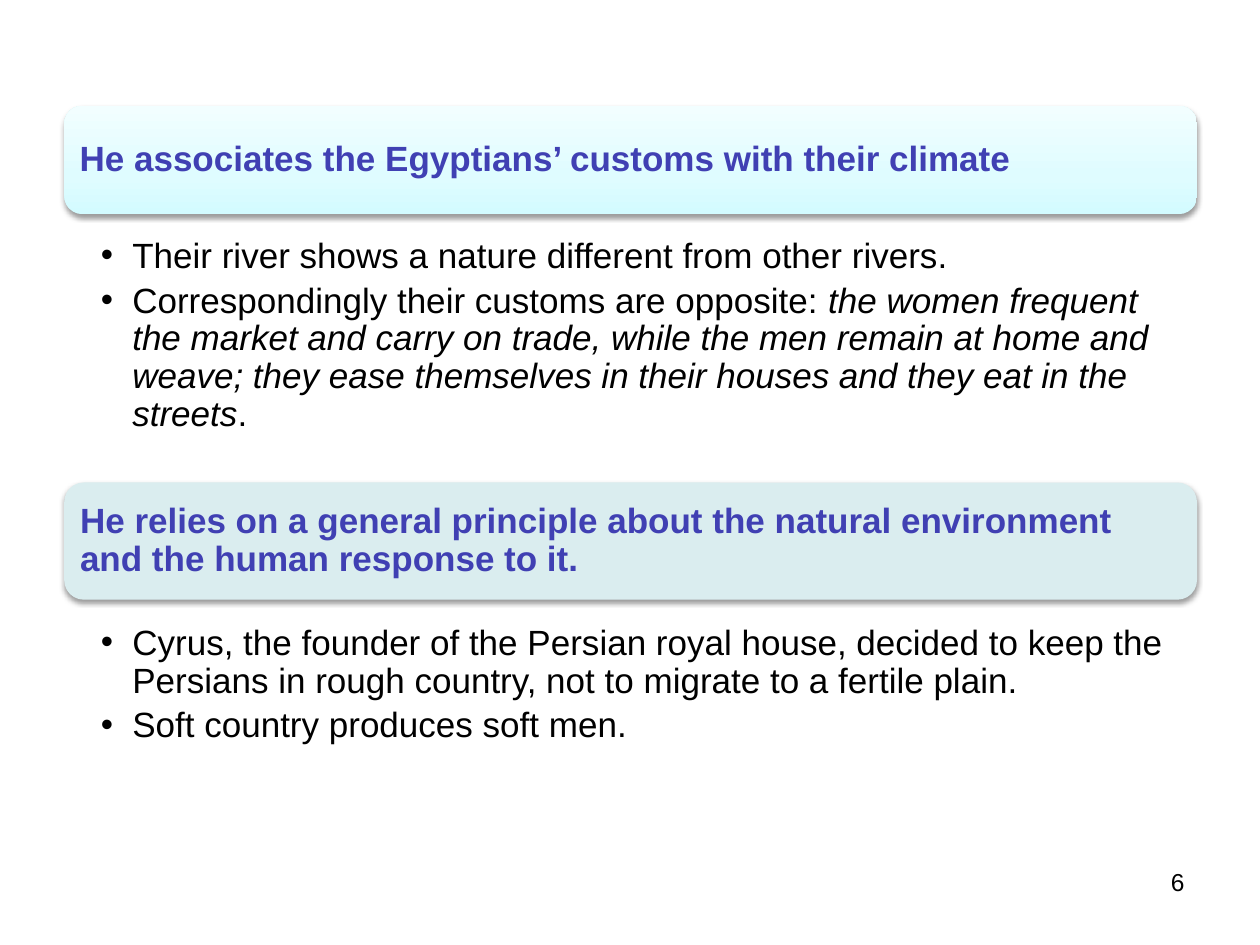
from copy import deepcopy
from dataclasses import dataclass
from typing import Optional

from lxml.etree import SubElement
from pptx import Presentation
from pptx.dml.color import RGBColor
from pptx.enum.shapes import MSO_SHAPE
from pptx.enum.text import MSO_ANCHOR, MSO_AUTO_SIZE, PP_ALIGN
from pptx.oxml.ns import qn
from pptx.util import Inches, Pt

BLACK = RGBColor(0x00, 0x00, 0x00)
INDIGO = RGBColor(0x40, 0x40, 0xB3)
PALE_TEAL = RGBColor(0xDA, 0xED, 0xEF)
CYAN_STOPS = (
    (0.0, RGBColor(0xD3, 0xFB, 0xFF)),
    (0.35, RGBColor(0xDF, 0xFC, 0xFF)),
    (1.0, RGBColor(0xF2, 0xFE, 0xFF)),
)
FONT = "Arial"
LEFT, WIDTH = 0.51, 8.99


@dataclass(frozen=True)
class Phrase:
    text: str
    italic: bool = False


@dataclass(frozen=True)
class Section:
    heading: str
    heading_top: float
    heading_height: float
    points: tuple[tuple[Phrase, ...], ...]
    points_top: float
    points_height: float
    solid: Optional[RGBColor] = None


SECTIONS = (
    Section(
        "He associates the Egyptians’ customs with their climate", 0.84, 0.86,
        (
            (Phrase("Their river shows a nature different from other rivers."),),
            (
                Phrase("Correspondingly their customs are opposite: "),
                Phrase("the women frequent the market and carry on trade, while the men "
                       "remain at home and weave; they ease themselves in their houses "
                       "and they eat in the streets", italic=True),
                Phrase("."),
            ),
        ),
        1.86, 1.58,
    ),
    Section(
        "He relies on a general principle about the natural environment "
        "and the human response to it.", 3.83, 0.93,
        (
            (Phrase("Cyrus, the founder of the Persian royal house, decided to keep "
                    "the Persians in rough country, not to migrate to a fertile plain."),),
            (Phrase("Soft country produces soft men."),),
        ),
        4.93, 1.18, PALE_TEAL,
    ),
)


def format_run(run, size: int, color: RGBColor, bold=False, italic=False) -> None:
    run.font.name = FONT
    run.font.size = Pt(size)
    run.font.color.rgb = color
    run.font.bold = bold
    run.font.italic = italic


def set_margins(frame, left: float, top: float, right: float, bottom: float) -> None:
    frame.margin_left, frame.margin_right = Inches(left), Inches(right)
    frame.margin_top, frame.margin_bottom = Inches(top), Inches(bottom)


def fill_gradient(fill) -> None:
    fill.gradient()
    fill.gradient_angle = 90
    first = fill.gradient_stops[0]._gs
    first.addnext(deepcopy(first))
    for stop, (position, color) in zip(fill.gradient_stops, CYAN_STOPS):
        stop.position = position
        stop.color.rgb = color


def add_shadow(shape) -> None:
    shape.shadow.inherit = False
    effects = shape._element.spPr.find(qn("a:effectLst"))
    shadow = SubElement(effects, qn("a:outerShdw"), blurRad=str(Pt(3.1)),
                        dist=str(Pt(1.6)), dir="5400000", rotWithShape="0")
    color = SubElement(shadow, qn("a:srgbClr"), val=str(BLACK))
    SubElement(color, qn("a:alpha"), val="38000")


def add_heading(slide, section: Section) -> None:
    banner = slide.shapes.add_shape(
        MSO_SHAPE.ROUNDED_RECTANGLE, Inches(LEFT), Inches(section.heading_top),
        Inches(WIDTH), Inches(section.heading_height))
    if section.solid is None:
        fill_gradient(banner.fill)
    else:
        banner.fill.solid()
        banner.fill.fore_color.rgb = section.solid
    banner.line.fill.background()
    add_shadow(banner)
    frame = banner.text_frame
    frame.word_wrap = True
    frame.vertical_anchor = MSO_ANCHOR.MIDDLE
    set_margins(frame, 0.08, 0.08, 0.08, 0.08)
    frame.text = section.heading
    paragraph = frame.paragraphs[0]
    paragraph.alignment = PP_ALIGN.LEFT
    paragraph.line_spacing = 0.9
    format_run(paragraph.runs[0], 20, INDIGO, bold=True)


def fill_points(placeholder, section: Section) -> None:
    placeholder.left, placeholder.top = Inches(LEFT), Inches(section.points_top)
    placeholder.width, placeholder.height = Inches(WIDTH), Inches(section.points_height)
    frame = placeholder.text_frame
    frame.auto_size = MSO_AUTO_SIZE.NONE
    frame.word_wrap = True
    set_margins(frame, 0.29, 0.03, 0.16, 0.03)
    for index, phrases in enumerate(section.points):
        paragraph = frame.paragraphs[0] if index == 0 else frame.add_paragraph()
        paragraph.line_spacing = 0.9
        paragraph.space_before = Pt(0)
        paragraph.space_after = Pt(4)
        properties = paragraph._p.get_or_add_pPr()
        properties.set("marL", str(Inches(0.25)))
        properties.set("indent", str(Inches(-0.25)))
        SubElement(properties, qn("a:buChar"), char="•")
        for phrase in phrases:
            run = paragraph.add_run()
            run.text = phrase.text
            format_run(run, 20, BLACK, italic=phrase.italic)


def add_page_number(slide, number: int) -> None:
    page_number = slide.shapes.add_textbox(
        Inches(7.17), Inches(6.83), Inches(2.33), Inches(0.52))
    frame = page_number.text_frame
    frame.word_wrap = True
    frame.text = str(number)
    frame.paragraphs[0].alignment = PP_ALIGN.RIGHT
    format_run(frame.paragraphs[0].runs[0], 14, BLACK)


def main() -> None:
    presentation = Presentation()
    presentation.slide_width, presentation.slide_height = Inches(10), Inches(7.5)
    two_content = presentation.slide_layouts.get_by_name("Two Content")
    slide = presentation.slides.add_slide(two_content)
    title, *bodies = slide.placeholders
    title._element.getparent().remove(title._element)
    for section, body in zip(SECTIONS, bodies):
        add_heading(slide, section)
        fill_points(body, section)
    add_page_number(slide, 6)
    presentation.save("out.pptx")


if __name__ == "__main__":
    main()
